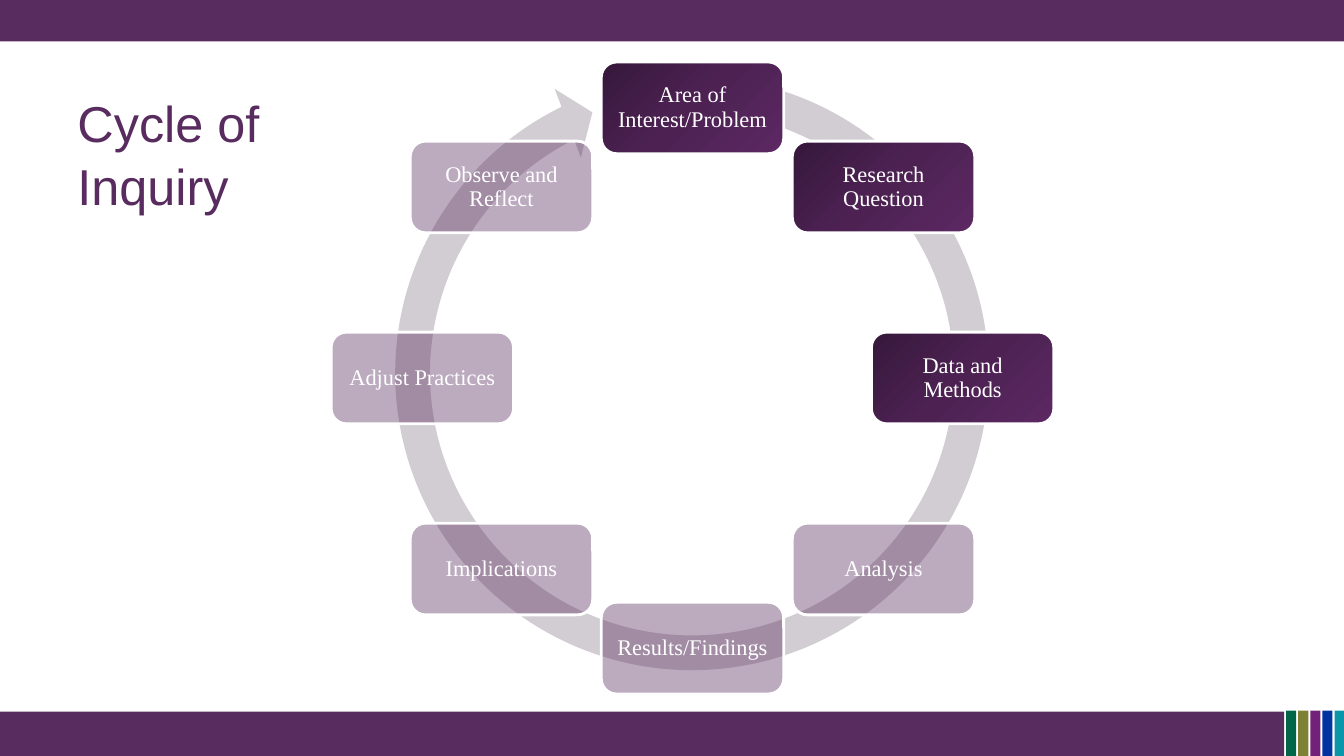
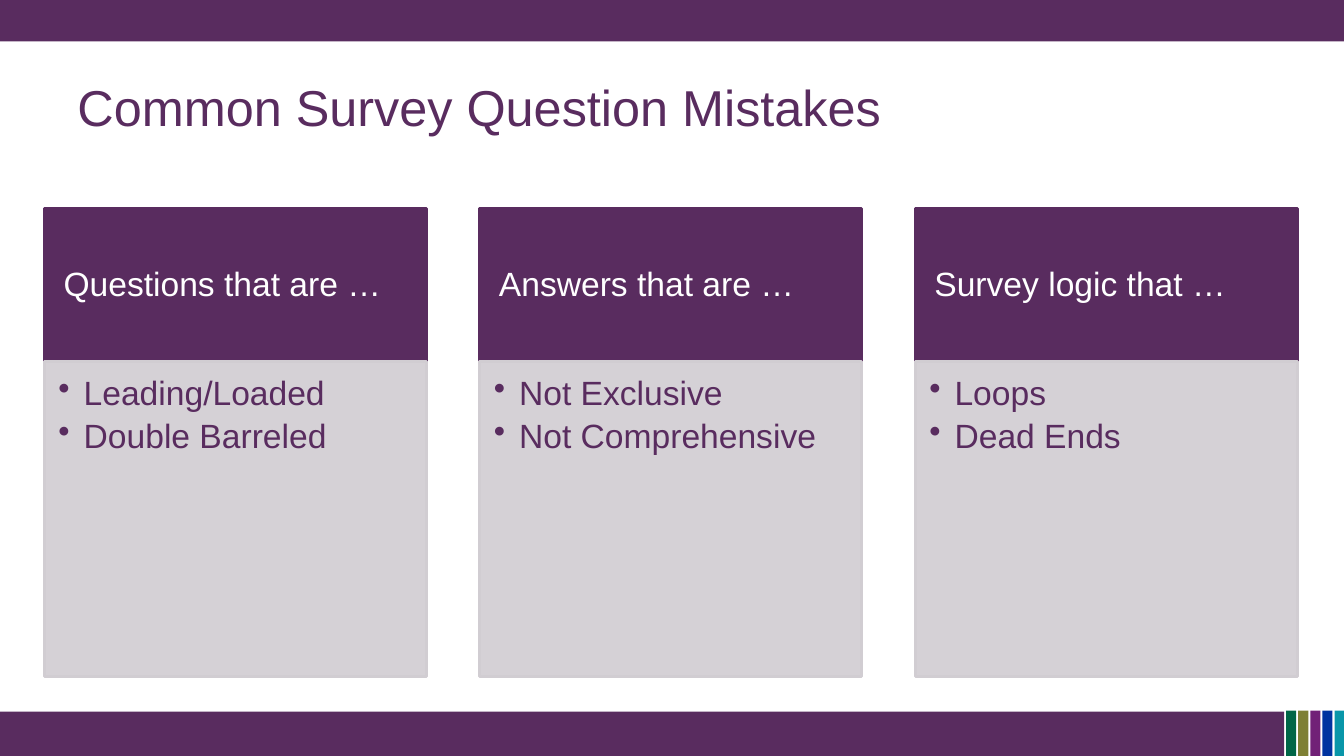
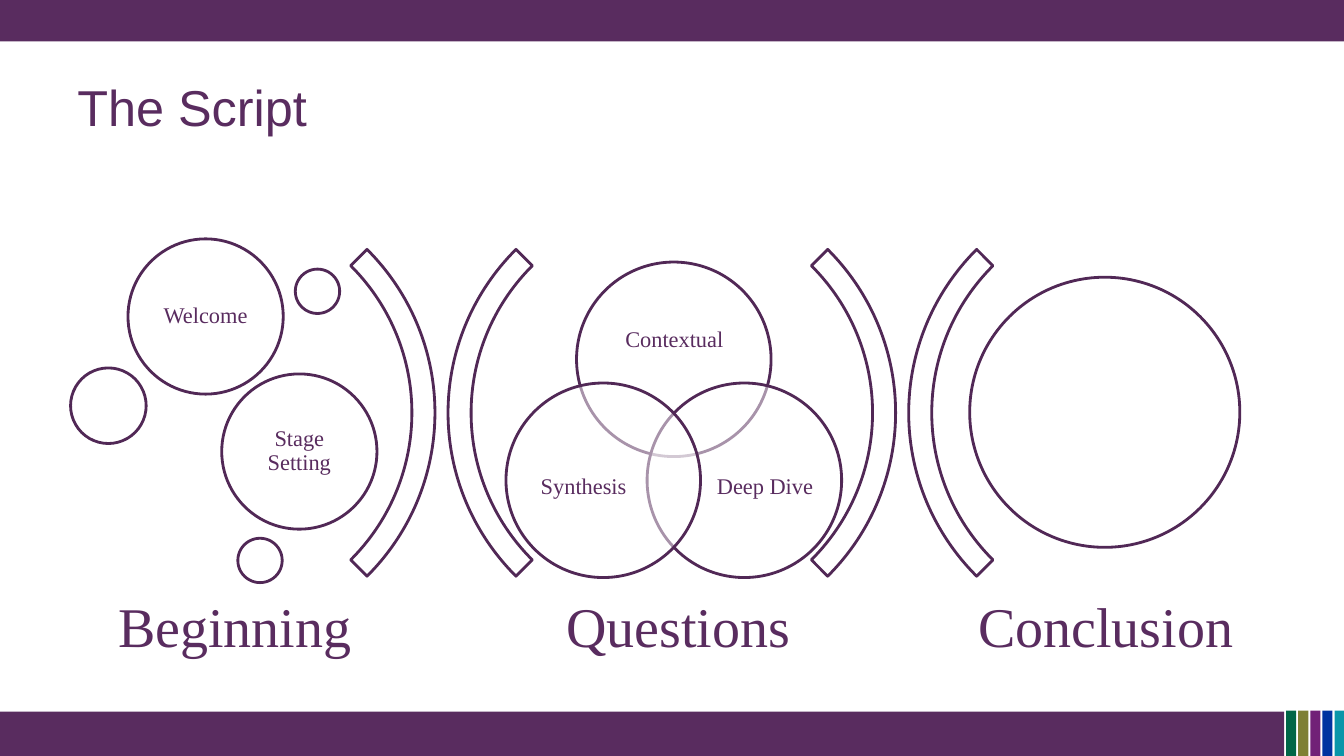
import copy
import math

from lxml import etree
from pptx import Presentation
from pptx import util as u
from pptx.dml.color import RGBColor
from pptx.enum import shapes, text
from pptx.oxml.ns import qn

PX = 9144  # EMU in one px: 100 px to the inch
PURPLE, OUTLINE, GREY, WHITE = "592C5F", "512856", "D1CDD2", "FFFFFF"
STRIPES = ("006647", "7E8034", "712177", "0033A0", "0996A9")
GRADIENT = ("36183B", "4D2253", "5C2863")
SANS, SERIF = "Arial", "Times New Roman"
KIND = shapes.MSO_SHAPE
LEFT, CENTER = text.PP_ALIGN.LEFT, text.PP_ALIGN.CENTER
TOP, MIDDLE = text.MSO_ANCHOR.TOP, text.MSO_ANCHOR.MIDDLE


def px(length):
    return u.Emu(round(length * PX))


def rgb(color):
    return RGBColor.from_string(color)


class Deck:
    def __init__(self):
        self.presentation = Presentation()
        self.presentation.slide_width = u.Emu(12192000)
        self.presentation.slide_height = px(750)
        self.slide = None

    def new_slide(self, title, width=1200, height=125):
        """Start a slide with the shared bands, stripes and title."""
        layout = self.presentation.slide_layouts[6]
        self.slide = self.presentation.slides.add_slide(layout)
        self.shape(KIND.RECTANGLE, (0, 706, 1274, 44), PURPLE)
        for index, color in enumerate(STRIPES):
            self.shape(KIND.RECTANGLE, (1276 + 12 * index, 705, 10, 45), color)
        self.shape(KIND.RECTANGLE, (0, 0, 1334, 41), PURPLE)
        self.label((67, 41, width, height), title, 36, font=SANS, align=LEFT,
                   insets=(10, 5, 10, 5), spacing=1.05)

    def shape(self, kind, box, fill, line=None, opacity=100, adjustments=(), rotation=0):
        shape = self.slide.shapes.add_shape(kind, *map(px, box))
        shape.shadow.inherit = False
        shape.rotation = rotation
        for index, value in enumerate(adjustments):
            shape.adjustments[index] = value
        if isinstance(fill, tuple):
            self.gradient(shape, fill)
        else:
            shape.fill.solid()
            shape.fill.fore_color.rgb = rgb(fill)
        if opacity < 100:
            color = shape._element.spPr.find(qn("a:solidFill"))[0]
            etree.SubElement(color, qn("a:alpha")).set("val", str(opacity * 1000))
        if line:
            shape.line.color.rgb = rgb(line)
            shape.line.width = u.Pt(2)
        else:
            shape.line.fill.background()
        return shape

    def gradient(self, shape, colors):
        """Fill with three evenly spaced colours, running to the lower right."""
        shape.fill.gradient()
        shape.fill.gradient_angle = 315
        stops = shape._element.spPr.find(qn("a:gradFill")).find(qn("a:gsLst"))
        stops.insert(1, copy.deepcopy(stops[0]))
        for index, (stop, color) in enumerate(zip(shape.fill.gradient_stops, colors)):
            stop.position = index / 2
            stop.color.rgb = rgb(color)

    def label(self, box, *args, **style):
        self.set_text(self.slide.shapes.add_textbox(*map(px, box)), *args, **style)

    def set_text(self, shape, lines, size, color=PURPLE, font=SERIF, align=CENTER,
                 anchor=MIDDLE, insets=(0, 0, 0, 0), spacing=0.9, bullets=False):
        """Put a string, or a list with one string a paragraph, into a shape."""
        frame = shape.text_frame
        frame.word_wrap = True
        frame.vertical_anchor = anchor
        (frame.margin_left, frame.margin_top,
         frame.margin_right, frame.margin_bottom) = map(px, insets)
        frame.text = lines if isinstance(lines, str) else "\n".join(lines)
        for paragraph in frame.paragraphs:
            if bullets:
                self.bullet(paragraph)
            paragraph.alignment = align
            paragraph.line_spacing = spacing
            paragraph.font.size = u.Pt(size)
            paragraph.font.name = font
            paragraph.font.color.rgb = rgb(color)

    def bullet(self, paragraph):
        properties = paragraph._p.get_or_add_pPr()
        properties.set("marL", str(px(25)))
        properties.set("indent", str(px(-25)))
        etree.SubElement(properties, qn("a:buChar")).set("char", "•")
        paragraph.space_after = u.Pt(5)

    def circle(self, left, top, size, caption="", opacity=50):
        circle = self.shape(KIND.OVAL, (left, top, size, size), WHITE, OUTLINE, opacity)
        if caption:
            self.set_text(circle, caption, 16, insets=(7, 7, 7, 7))


def cycle_slide(deck):
    deck.new_slide("Cycle of Inquiry", 264, 220)
    deck.shape(KIND.CIRCULAR_ARROW, (373, 57, 627, 627), GREY,
               adjustments=(0.055, 3.31, 146.17, 168.92, 0.058))
    steps = ("Area of Interest/Problem", "Research Question", "Data and Methods",
             "Analysis", "Results/Findings", "Implications", "Adjust Practices",
             "Observe and Reflect")
    center_x, center_y, radius, width, height = 687, 375, 268, 181, 91
    for index, step in enumerate(steps):
        angle = math.tau * index / len(steps)
        left = center_x + radius * math.sin(angle) - width / 2
        top = center_y - radius * math.cos(angle) - height / 2
        fill, opacity = (GRADIENT, 100) if index < 3 else (PURPLE, 40)
        card = deck.shape(KIND.ROUNDED_RECTANGLE, (left, top, width, height),
                          fill, WHITE, opacity)
        deck.set_text(card, step, 16, WHITE, insets=(7, 7, 7, 7))


def mistakes_slide(deck):
    deck.new_slide("Common Survey Question Mistakes")
    columns = (("Questions that are …", ["Leading/Loaded", "Double Barreled"]),
               ("Answers that are …", ["Not Exclusive", "Not Comprehensive"]),
               ("Survey logic that …", ["Loops", "Dead Ends"]))
    for index, (heading, mistakes) in enumerate(columns):
        left = 44 + 432 * index
        head = deck.shape(KIND.RECTANGLE, (left, 207, 379, 152), PURPLE, PURPLE)
        deck.set_text(head, heading, 24, WHITE, SANS, LEFT, insets=(19, 11, 19, 11))
        body = deck.shape(KIND.RECTANGLE, (left, 359, 379, 312), GREY, GREY, 90)
        deck.set_text(body, mistakes, 24, PURPLE, SANS, LEFT, TOP, (14, 14, 19, 21),
                      bullets=True)


def script_slide(deck):
    deck.new_slide("The Script")
    for left in (-27, 430):
        for offset, rotation in ((0, 90), (472, 270)):
            deck.shape(KIND.BLOCK_ARC, (left + offset, 180, 458, 459), WHITE, OUTLINE,
                       adjustments=(135, 189, 0.05), rotation=rotation)
    for left, caption in ((59, "Beginning"), (499, "Questions"), (923, "Conclusion")):
        deck.label((left, 578, 348, 92), caption, 40, insets=(17, 17, 17, 17))
    venn = ((572, 260, "Contextual", (598, 294, 142, 87)),
            (642, 380, "Deep Dive", (701, 430, 116, 106)),
            (502, 380, "Synthesis", (521, 430, 116, 106)))
    for left, top, caption, caption_box in venn:
        deck.circle(left, top, 193)
        deck.label(caption_box, caption, 16)
    deck.circle(127, 237, 154, "Welcome")
    deck.circle(220, 371, 154, "Stage Setting")
    for left, top, size in ((70, 365, 75), (293, 267, 44), (236, 534, 44)):
        deck.circle(left, top, size)
    deck.circle(962, 275, 268, opacity=100)


def main():
    deck = Deck()
    cycle_slide(deck)
    mistakes_slide(deck)
    script_slide(deck)
    deck.presentation.save("out.pptx")


if __name__ == "__main__":
    main()
